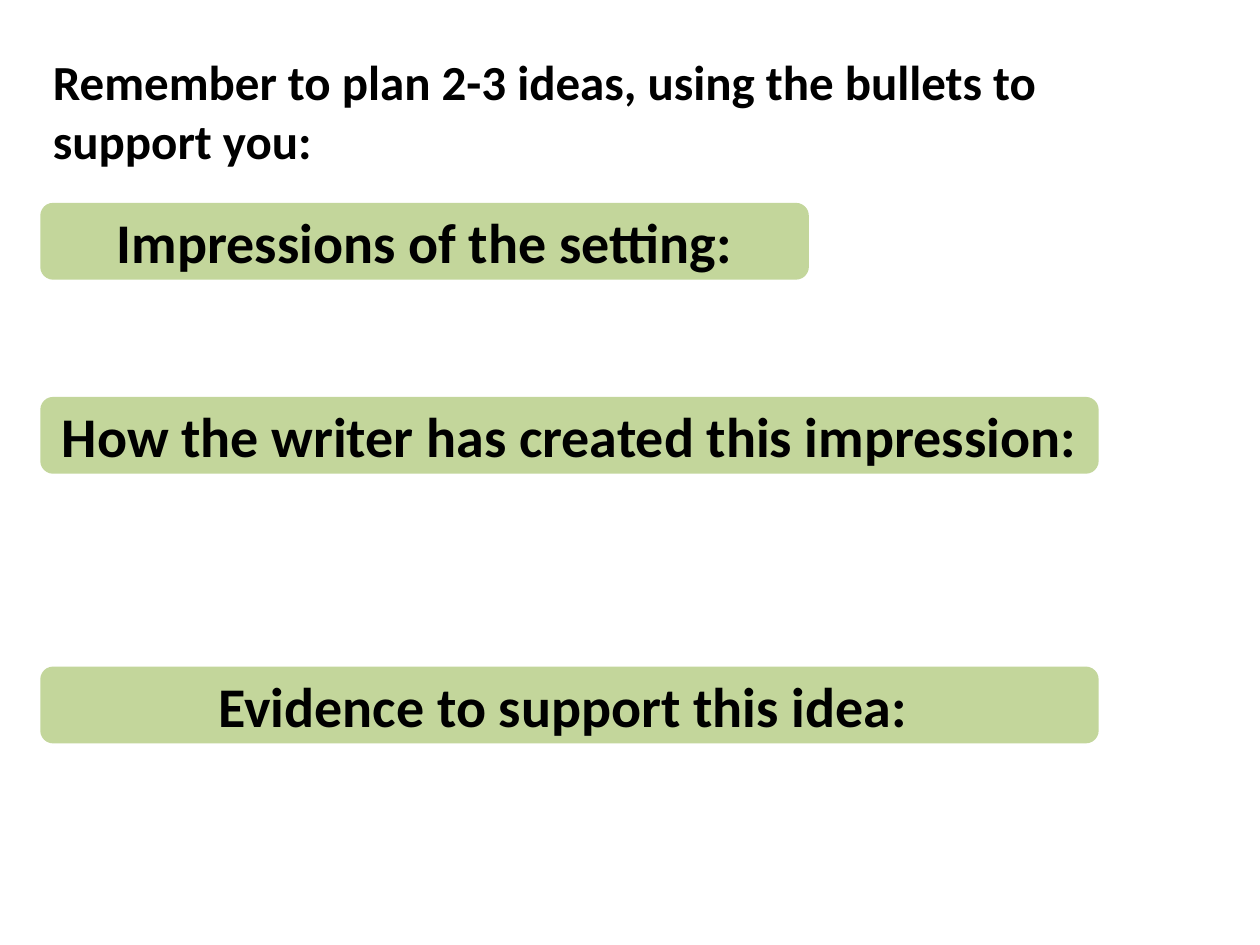
from dataclasses import dataclass

import pptx
import pptx.dml.color
import pptx.enum.shapes
import pptx.enum.text
import pptx.util

Inches = pptx.util.Inches
Pt = pptx.util.Pt
RGBColor = pptx.dml.color.RGBColor
Align = pptx.enum.text.PP_ALIGN
Anchor = pptx.enum.text.MSO_ANCHOR


@dataclass(frozen=True)
class Theme:
    font: str = "Calibri"
    ink: RGBColor = RGBColor(0x00, 0x00, 0x00)
    banner: RGBColor = RGBColor(0xC3, 0xD6, 0x9B)
    reminder_size: int = 28
    prompt_size: int = 32


THEME = Theme()
LEFT = 0.32
BANNER_HEIGHT = 0.61
PROMPTS = [
    ("Impressions of the setting:", 1.61, 6.1),
    ("How the writer has created this impression: ", 3.15, 8.4),
    ("Evidence to support this idea: ", 5.29, 8.4),
]


def write_text(frame, text, size, align, anchor):
    frame.word_wrap = True
    frame.vertical_anchor = anchor
    paragraph = frame.paragraphs[0]
    paragraph.text = text
    paragraph.alignment = align
    paragraph.font.name = THEME.font
    paragraph.font.size = Pt(size)
    paragraph.font.bold = True
    paragraph.font.color.rgb = THEME.ink


def add_reminder(slide, text):
    reminder = slide.shapes.title
    reminder.left, reminder.top = Inches(LEFT), Inches(0.36)
    reminder.width, reminder.height = Inches(9.23), Inches(1.04)
    reminder.text_frame.auto_size = pptx.enum.text.MSO_AUTO_SIZE.SHAPE_TO_FIT_TEXT
    write_text(reminder.text_frame, text, THEME.reminder_size, Align.LEFT, Anchor.TOP)


def add_prompt(slide, text, top, width):
    banner = slide.shapes.add_shape(
        pptx.enum.shapes.MSO_SHAPE.ROUNDED_RECTANGLE,
        Inches(LEFT), Inches(top), Inches(width), Inches(BANNER_HEIGHT),
    )
    banner.shadow.inherit = False
    banner.fill.solid()
    banner.fill.fore_color.rgb = THEME.banner
    banner.line.fill.background()
    write_text(banner.text_frame, text, THEME.prompt_size, Align.CENTER, Anchor.MIDDLE)


def main():
    deck = pptx.Presentation()
    deck.slide_width, deck.slide_height = Inches(10), Inches(7.5)
    slide = deck.slides.add_slide(deck.slide_layouts.get_by_name("Title Only"))
    add_reminder(slide, "Remember to plan 2-3 ideas, using the bullets to support you:")
    for text, top, width in PROMPTS:
        add_prompt(slide, text, top, width)
    deck.save("out.pptx")


if __name__ == "__main__":
    main()
